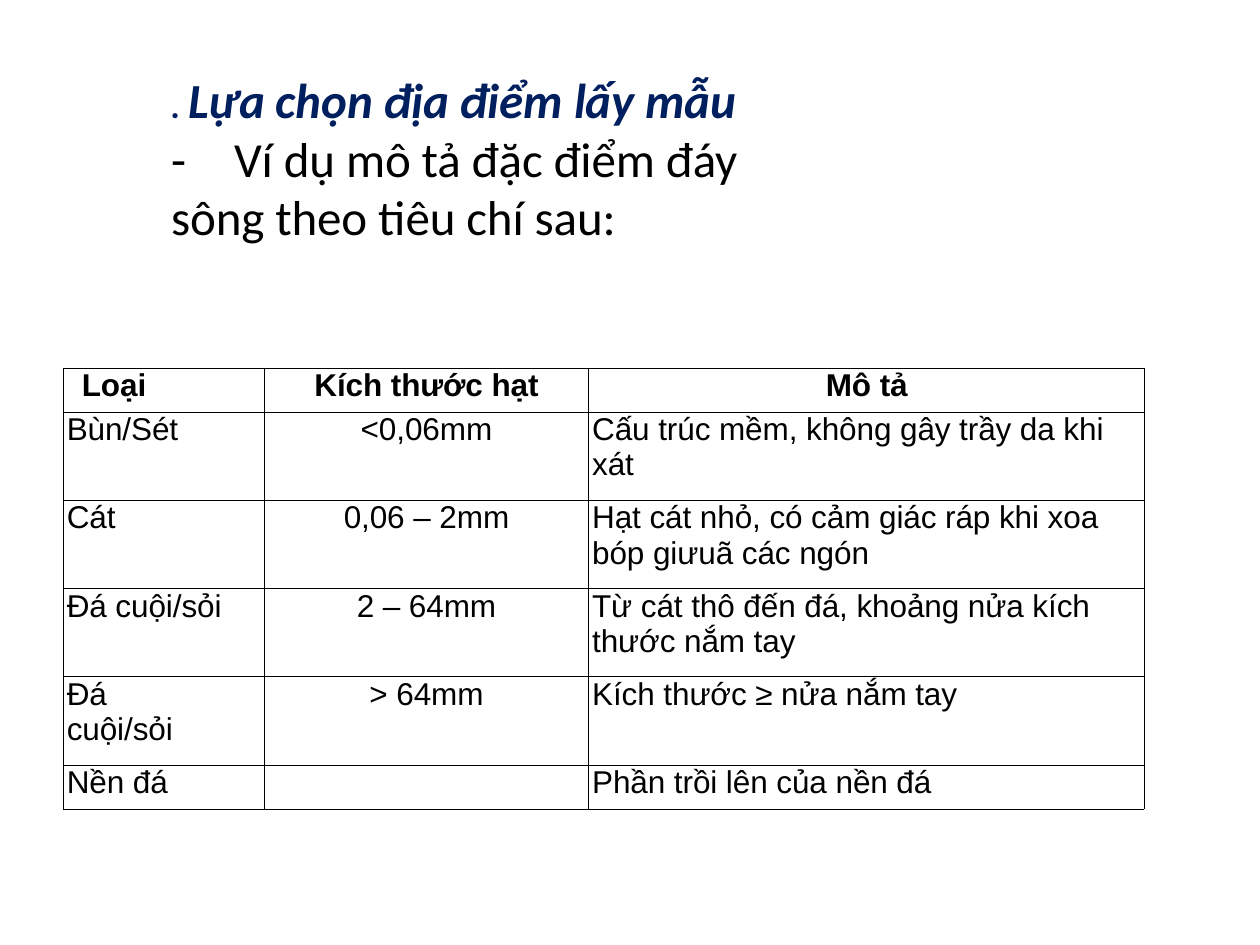
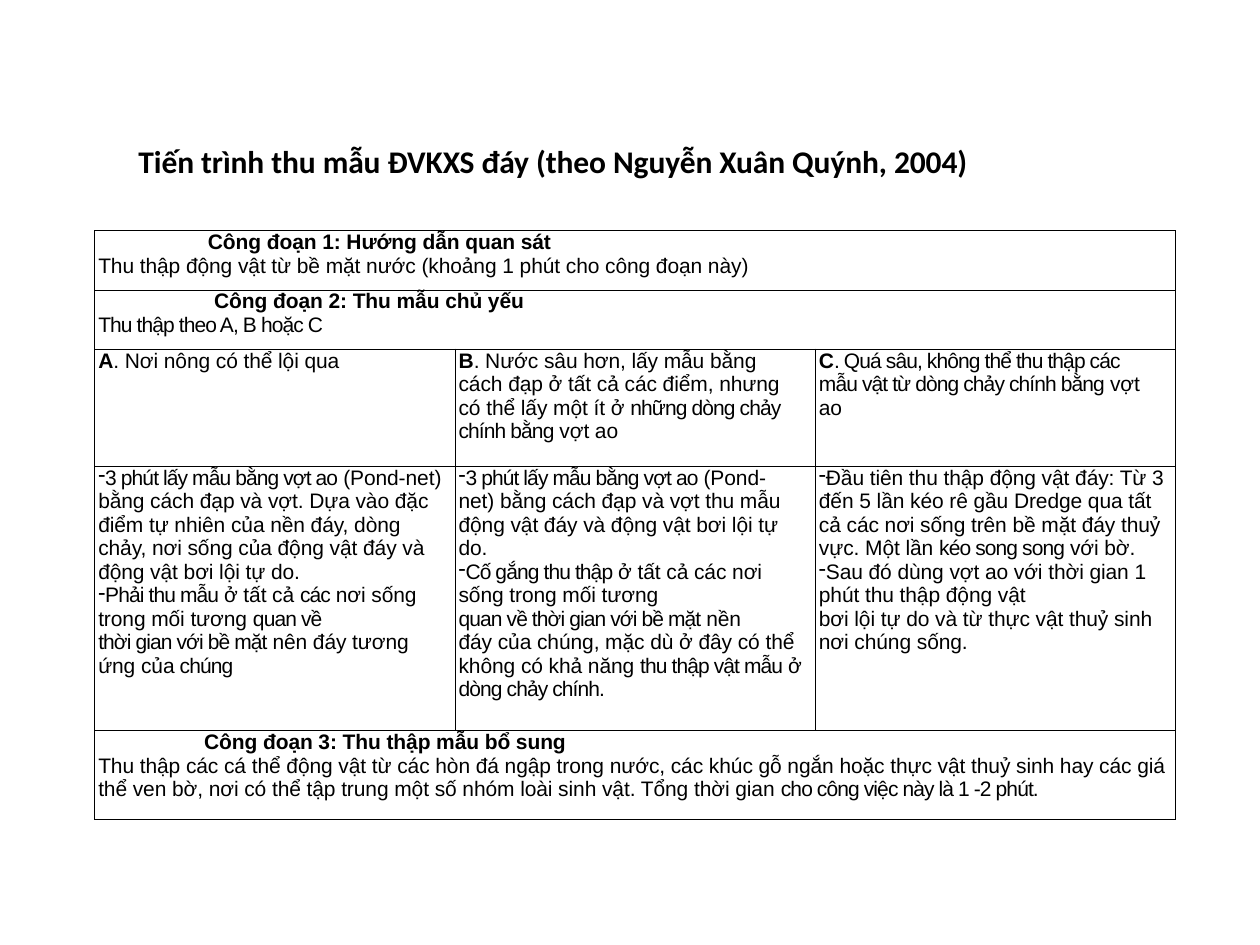
"""Build two slides on choosing river sampling sites and collecting benthic invertebrates."""
import dataclasses

import lxml.etree
import pptx
import pptx.dml.color
import pptx.enum.text
import pptx.oxml.ns
import pptx.util

EMU_PER_PX = 9144


@dataclasses.dataclass(frozen=True)
class Theme:
    ink: str = "000000"
    navy: str = "001F5F"
    heading_font: str = "Calibri"
    table_font: str = "Arial"
    marker: int = 20
    heading: int = 28
    title: int = 18
    grain: int = 18
    steps: int = 12
    border: float = 0.31
    space_before: float = 0.8
    normal_spacing: int = -5
    tight_spacing: int = -50


@dataclasses.dataclass
class Line:
    pieces: tuple
    left: int = 3
    right: int = 0
    dash: bool = False
    centered: bool = False
    tab: int = 0


THEME = Theme()


def plain(words):
    return words, {}


def bold(words):
    return words, {"bold": True}


def tight(words):
    return words, {"spacing": THEME.tight_spacing}


def navy(words, size):
    return words, {"bold": True, "italic": True, "color": THEME.navy, "size": size}


SITE_HEADING = [
    Line((navy(". ", THEME.marker), navy("Lựa chọn địa điểm lấy mẫu", THEME.heading)), left=1),
    Line((plain("-\tVí dụ mô tả đặc điểm đáy sông theo tiêu chí sau:"),), left=1, tab=48),
]
SITE_HEADING_BOX = (125, 50, 500, 199)

GRAIN_HEADER = ("Loại", "Kích thước hạt", "Mô tả")
GRAIN_TYPES = [
    ("Bùn/Sét", "<0,06mm", "Cấu trúc mềm, không gây trầy da khi xát"),
    ("Cát", "0,06 – 2mm", "Hạt cát nhỏ, có cảm giác ráp khi xoa bóp giưuã các ngón"),
    ("Đá cuội/sỏi", "2 – 64mm", "Từ cát thô đến đá, khoảng nửa kích thước nắm tay"),
    ("Đá\ncuội/sỏi", "> 64mm", "Kích thước ≥ nửa nắm tay"),
    ("Nền đá", "", "Phần trồi lên của nền đá"),
]
GRAIN_ORIGIN = (50, 292)
GRAIN_COLUMNS = (160, 257, 441)
GRAIN_ROWS = (35, 70, 70, 70, 70, 35)

STEPS_TITLE = [Line((bold("Tiến trình thu mẫu ĐVKXS đáy (theo Nguyễn Xuân Quýnh, 2004)"),), left=1)]
STEPS_TITLE_BOX = (99, 108, 809, 40)
STEPS_ORIGIN = (75, 183)
STEPS_COLUMNS = (286,) * 3
STEPS_ROWS = (47, 47, 93, 210, 70)

STEPS = [
    [[
        Line((bold("Công đoạn 1: Hướng dẫn quan sát"),), left=90),
        Line((plain("Thu thập động vật từ bề mặt nước (khoảng 1 phút cho công đoạn này)"),)),
    ]],
    [[
        Line((bold("Công đoạn 2: Thu mẫu chủ yếu"),), left=95),
        Line((tight("Thu thập theo A, B hoặc C"),)),
    ]],
    [
        [Line((bold("A"), plain(". Nơi nông có thể lội qua")))],
        [Line((
            bold("B"),
            plain(". Nước sâu hơn, lấy mẫu bằng cách đạp ở tất cả các điểm, nhưng có thể lấy một ít ở "),
            tight("những dòng chảy chính bằng "),
            plain("vợt ao"),
        ), right=15)],
        [Line((
            bold("C"),
            tight(". Quá sâu, không thể thu thập các mẫu vật từ dòng chảy chính bằng "),
            plain("vợt ao"),
        ), right=12)],
    ],
    [
        [
            Line((
                tight("3 phút lấy mẫu bằng vợt ao "),
                plain("(Pond-net) bằng cách đạp và vợt. Dựa vào đặc điểm tự nhiên của nền đáy, "
                      "dòng chảy, nơi sống của động vật đáy và động vật bơi lội tự do."),
            ), right=4, dash=True),
            Line((
                tight("Phải thu mẫu "),
                plain("ở tất cả "),
                tight("các "),
                plain("nơi sống trong mối tương "),
                tight("quan về"),
            ), dash=True),
            Line((
                tight("thời gian với bề mặt "),
                plain("nên đáy tương ứng của"),
                tight(" chúng"),
            ), right=4),
        ],
        [
            Line((
                tight("3 phút lấy mẫu bằng vợt ao "),
                plain("(Pond-net) bằng cách đạp và vợt thu mẫu động vật đáy và động vật bơi lội tự do."),
            ), right=12, dash=True),
            Line((
                tight("Cố gắng thu thập "),
                plain("ở tất cả các nơi sống trong mối tương"),
            ), right=12, dash=True),
            Line((tight("quan về thời gian với bề mặt "), plain("nền"))),
            Line((
                plain("đáy của chúng, mặc dù ở đây có thể không có khả năng "),
                tight("thu thập vật mẫu "),
                plain("ở "),
                tight("dòng chảy chính."),
            )),
        ],
        [
            Line((
                plain("Đầu tiên thu thập động vật đáy: Từ 3 đến 5 lần kéo rê gầu Dredge qua tất cả "
                      "các nơi sống trên bề mặt đáy thuỷ vực. Một lần "),
                tight("kéo song song "),
                plain("với bờ."),
            ), dash=True),
            Line((plain("Sau đó dùng vợt ao với thời gian 1 phút thu thập động vật"),), dash=True),
            Line((plain("bơi lội tự do và từ thực vật thuỷ sinh nơi chúng sống."),)),
        ],
    ],
    [[
        Line((bold("Công đoạn 3: Thu thập mẫu bổ sung"),), left=87),
        Line((
            plain("Thu thập các cá thể động vật từ các hòn đá ngập trong nước, các khúc gỗ ngắn "
                  "hoặc thực vật thuỷ sinh hay các giá thể ven bờ, nơi có thể tập trung một số "
                  "nhóm loài sinh vật. Tổng thời gian "),
            tight("cho công việc này là 1 -2 phút."),
        )),
    ]],
]


def px(length):
    return pptx.util.Emu(length * EMU_PER_PX)


def add_xml(parent, tag, **attributes):
    return lxml.etree.SubElement(parent, pptx.oxml.ns.qn(tag), attributes)


def format_run(run, font_name, size, bold=False, italic=False, color=THEME.ink,
               spacing=THEME.normal_spacing):
    font = run.font
    font.name, font.size = font_name, pptx.util.Pt(size)
    font.bold, font.italic = bold, italic
    font.color.rgb = pptx.dml.color.RGBColor.from_string(color)
    run._r.get_or_add_rPr().set("spc", str(spacing))


def write_lines(frame, lines, font_name, size):
    for index, line in enumerate(lines):
        paragraph = frame.add_paragraph() if index else frame.paragraphs[0]
        paragraph.space_before = pptx.util.Pt(0 if index else THEME.space_before)
        align = pptx.enum.text.PP_ALIGN
        paragraph.alignment = align.CENTER if line.centered else align.LEFT
        properties = paragraph._p.get_or_add_pPr()
        for side, length in (("marL", line.left), ("marR", line.right), ("indent", 0)):
            properties.set(side, str(px(length)))
        if line.dash:
            add_xml(properties, "a:buChar", char="-")
        else:
            add_xml(properties, "a:buNone")
        if line.tab:
            add_xml(add_xml(properties, "a:tabLst"), "a:tab", pos=str(px(line.tab)), algn="l")
        for words, look in line.pieces:
            run = paragraph.add_run()
            run.text = words
            format_run(run, font_name, **{"size": size, **look})


def add_heading(slide, box, lines, size):
    frame = slide.shapes.add_textbox(*map(px, box)).text_frame
    frame.word_wrap = True
    write_lines(frame, lines, THEME.heading_font, size)


def style_cell(cell):
    cell.margin_left = cell.margin_right = cell.margin_top = cell.margin_bottom = 0
    cell.fill.background()
    properties = cell._tc.get_or_add_tcPr()
    for position, side in enumerate(("a:lnL", "a:lnR", "a:lnT", "a:lnB")):
        edge = add_xml(properties, side, w=str(pptx.util.Pt(THEME.border)))
        add_xml(add_xml(edge, "a:solidFill"), "a:srgbClr", val=THEME.ink)
        properties.insert(position, edge)


def add_grid(slide, origin, columns, heights, rows, size):
    table = slide.shapes.add_table(
        len(heights), len(columns), *map(px, (*origin, sum(columns), sum(heights)))).table
    table.first_row = table.horz_banding = False
    for column, width in zip(table.columns, columns):
        column.width = px(width)
    for row, height in zip(table.rows, heights):
        row.height = px(height)
    for cell in table.iter_cells():
        style_cell(cell)
    for row_index, row in enumerate(rows):
        if len(row) == 1:
            table.cell(row_index, 0).merge(table.cell(row_index, len(columns) - 1))
        for column_index, lines in enumerate(row):
            frame = table.cell(row_index, column_index).text_frame
            write_lines(frame, lines, THEME.table_font, size)


def grain_rows():
    header = [[Line((bold(label),), left=left, centered=index > 0)]
              for index, (label, left) in enumerate(zip(GRAIN_HEADER, (15, 0, 1)))]
    body = [[[Line((plain(part),), left=0 if index == 1 else 3, centered=index == 1)
              for part in entry.splitlines()]
             for index, entry in enumerate(grain)] for grain in GRAIN_TYPES]
    return [header, *body]


def main():
    deck = pptx.Presentation()
    deck.slide_width, deck.slide_height = px(1000), px(750)
    blank = deck.slide_layouts[6]

    site = deck.slides.add_slide(blank)
    add_heading(site, SITE_HEADING_BOX, SITE_HEADING, THEME.heading)
    add_grid(site, GRAIN_ORIGIN, GRAIN_COLUMNS, GRAIN_ROWS, grain_rows(), THEME.grain)

    process = deck.slides.add_slide(blank)
    add_heading(process, STEPS_TITLE_BOX, STEPS_TITLE, THEME.title)
    add_grid(process, STEPS_ORIGIN, STEPS_COLUMNS, STEPS_ROWS, STEPS, THEME.steps)

    deck.save("out.pptx")


if __name__ == "__main__":
    main()
